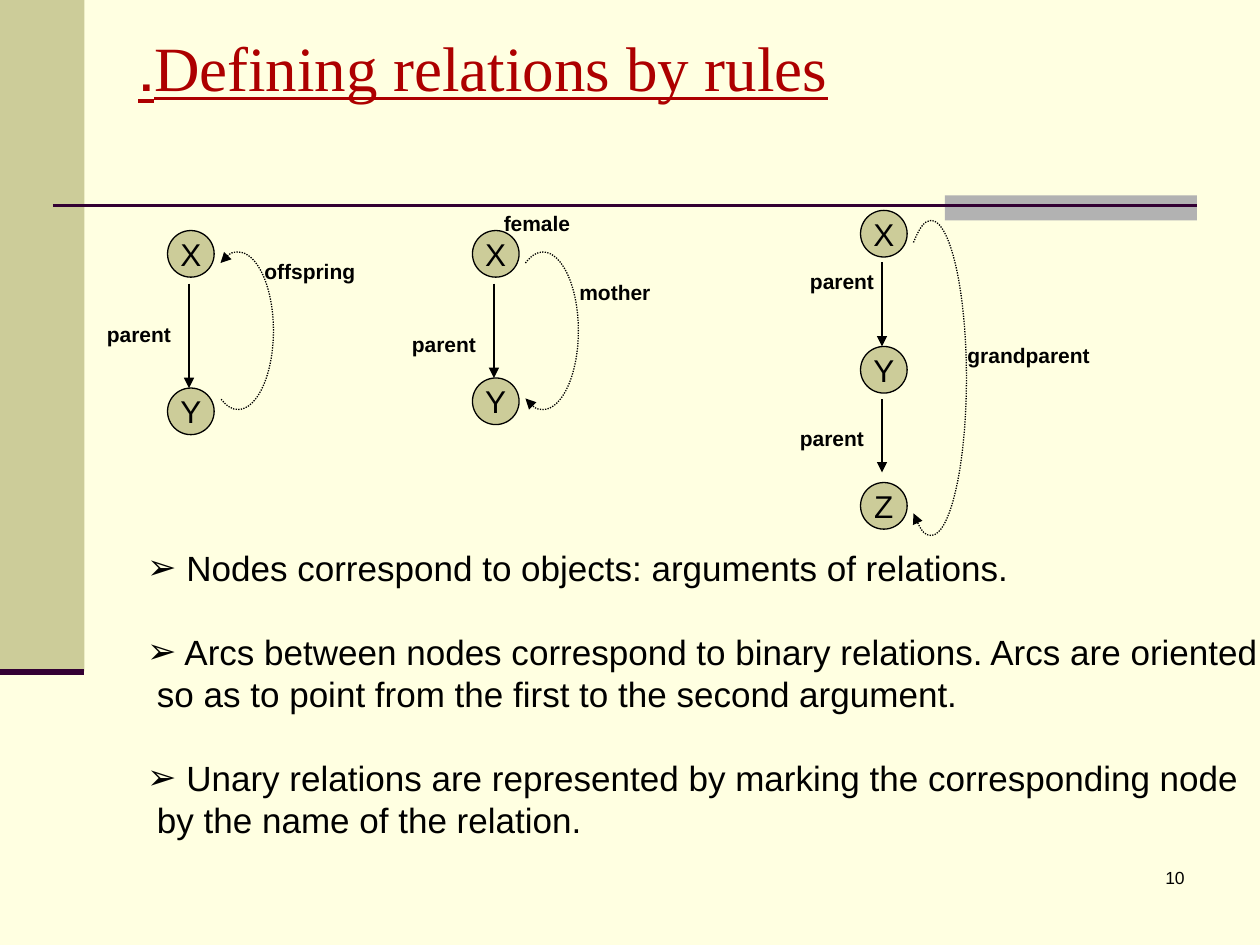
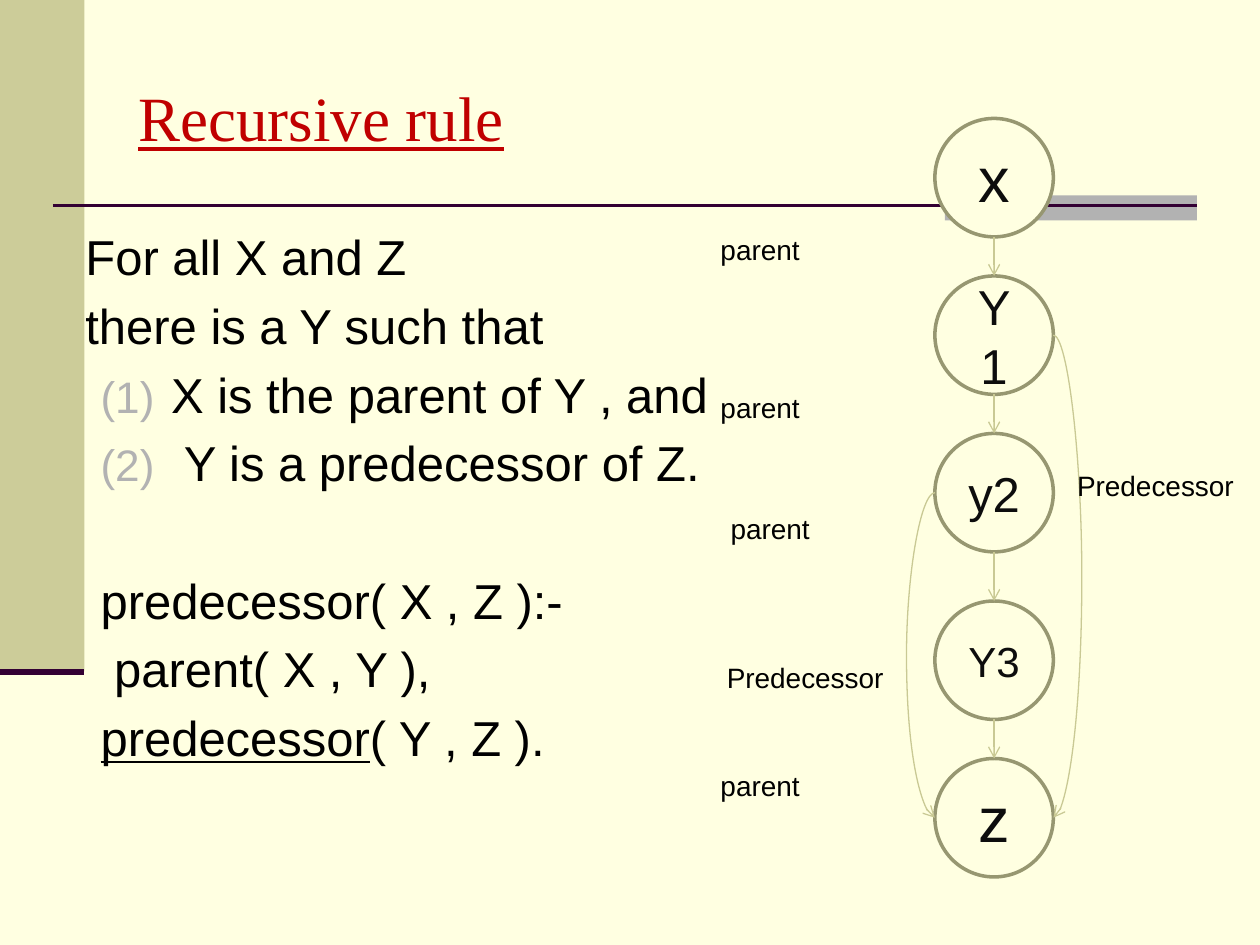
from lxml import etree
from pptx import Presentation
from pptx.dml.color import RGBColor
from pptx.enum import dml, shapes, text
from pptx.oxml.ns import qn
from pptx.util import Emu, Inches, Pt

CREAM = RGBColor(0xFF, 0xFF, 0xE1)
KHAKI = RGBColor(0xCC, 0xCC, 0x99)
OLIVE = RGBColor(0x97, 0x97, 0x71)
PALE_OLIVE = RGBColor(0xC9, 0xC9, 0x94)
GREY = RGBColor(0xB2, 0xB2, 0xB2)
PURPLE = RGBColor(0x33, 0x00, 0x33)
DARK_RED = RGBColor(0xAD, 0x00, 0x00)
RED = RGBColor(0xC0, 0x00, 0x00)
BLACK = RGBColor(0, 0, 0)
INK = RGBColor(0x0D, 0x0D, 0x0D)

LEFT, CENTER, RIGHT = text.PP_ALIGN.LEFT, text.PP_ALIGN.CENTER, text.PP_ALIGN.RIGHT
MIDDLE, TOP = text.MSO_ANCHOR.MIDDLE, text.MSO_ANCHOR.TOP

LABEL_WIDTHS = {"parent": 0.71, "offspring": 0.93, "female": 0.73,
                "mother": 0.77, "grandparent": 1.17}
SMALL = 0.37  # diameter of a node in the relation graphs
BIG = 0.94    # diameter of a node in the predecessor chain


def add_run(p, content, size=18, color=BLACK, font="Arial", bold=False, underline=False):
    r = p.add_run()
    r.text = content
    f = r.font
    f.name, f.size, f.bold, f.underline = font, Pt(size), bold, underline
    f.color.rgb = color


def add_text(s, content, x, y, w, h, align=LEFT, anchor=TOP, rtl=False, **fmt):
    tb = s.shapes.add_textbox(Inches(x), Inches(y), Inches(w), Inches(h))
    tf = tb.text_frame
    tf.word_wrap = True
    tf.vertical_anchor = anchor
    p = tf.paragraphs[0]
    p.alignment = align
    if rtl:
        p._p.get_or_add_pPr().set("rtl", "1")
    if content:
        add_run(p, content, **fmt)
    return tf


def set_indent(p, margin, indent):
    pPr = p._p.get_or_add_pPr()
    pPr.set("marL", str(Inches(margin)))
    pPr.set("indent", str(Inches(indent)))
    return pPr


def add_paragraph(tf, first, space):
    p = tf.paragraphs[0] if first else tf.add_paragraph()
    p.space_before = Pt(space)
    return p


def add_rect(s, x, y, w, h, color):
    sp = s.shapes.add_shape(shapes.MSO_SHAPE.RECTANGLE, *map(Inches, (x, y, w, h)))
    sp.shadow.inherit = False
    sp.fill.solid()
    sp.fill.fore_color.rgb = color
    sp.line.fill.background()


def add_node(s, name, x, y, d, size, fill=KHAKI, line=BLACK, weight=0.75, color=BLACK, wrap=False):
    sp = s.shapes.add_shape(shapes.MSO_SHAPE.OVAL, *map(Inches, (x, y, d, d)))
    sp.shadow.inherit = False
    sp.fill.solid()
    sp.fill.fore_color.rgb = fill
    sp.line.color.rgb = line
    sp.line.width = Pt(weight)
    tf = sp.text_frame
    tf.word_wrap = wrap
    tf.vertical_anchor = MIDDLE
    tf.paragraphs[0].alignment = CENTER
    add_run(tf.paragraphs[0], name, size, color)


def style_line(sp, color, weight, head=None, tail=None):
    """Format a line; head and tail are the arrowheads at its start and end."""
    sp.line.color.rgb = color
    sp.line.width = Pt(weight)
    ln = sp.line._get_or_add_ln()
    for tag, kind in (("a:headEnd", head), ("a:tailEnd", tail)):
        if kind:
            etree.SubElement(ln, qn(tag)).set("type", kind)


def add_line(s, x1, y1, x2, y2, color=BLACK, weight=0.75, tail=None):
    c = s.shapes.add_connector(shapes.MSO_CONNECTOR.STRAIGHT, *map(Inches, (x1, y1, x2, y2)))
    style_line(c, color, weight, tail=tail)
    etree.SubElement(c._element.spPr, qn("a:effectLst"))


def add_bow(s, x, y1, y2, side):
    """Curved arrow between two points above each other, bulging to side (1 right, -1 left)."""
    sliver, bulge = 1588, Inches(0.25)
    x = Inches(x)
    start, end = (x, x + sliver) if side > 0 else (x + sliver, x)
    c = s.shapes.add_connector(shapes.MSO_CONNECTOR.CURVE, Emu(start), Inches(y1),
                               Emu(end), Inches(y2))
    av = c._element.spPr.find(qn("a:prstGeom")).get_or_add_avLst()
    gd = etree.SubElement(av, qn("a:gd"))
    gd.set("name", "adj1")
    gd.set("fmla", f"val {round(bulge / sliver * 100000)}")
    style_line(c, PALE_OLIVE, 0.75, tail="arrow")
    etree.SubElement(c._element.spPr, qn("a:effectLst"))


def add_arc(s, x, y, h, head=None, tail=None):
    """Dotted arc of four Bézier curves, from top to bottom, open on the left."""
    upper = [(0, 0.07), (0.05, 0.02), (0.09, 0), (0.14, 0), (0.29, 0), (0.42, 0.22), (0.42, 0.5)]
    lower = [(dx, 1 - part) for dx, part in reversed(upper[:-1])]
    points = [(Inches(x + dx), Inches(y + h * part)) for dx, part in upper + lower]
    fb = s.shapes.build_freeform(*points[0])
    fb.add_line_segments(points[1:], close=False)
    sp = fb.convert_to_shape()
    segments = list(sp._element.iter(qn("a:lnTo")))
    outline = segments[0].getparent()
    for i in range(0, len(segments), 3):
        curve = etree.SubElement(outline, qn("a:cubicBezTo"))
        for segment in segments[i:i + 3]:
            curve.append(segment[0])
            outline.remove(segment)
    sp.shadow.inherit = False
    sp.fill.background()
    sp.line.dash_style = dml.MSO_LINE.ROUND_DOT
    style_line(sp, BLACK, 0.75, head, tail)


def add_base(prs, title, color, title_height):
    s = prs.slides.add_slide(prs.slide_layouts[6])
    s.background.fill.solid()
    s.background.fill.fore_color.rgb = CREAM
    add_rect(s, 0, 0, 0.67, 5.33, KHAKI)
    add_rect(s, 7.5, 1.55, 2, 0.2, GREY)
    add_line(s, 0.42, 1.63, 9.5, 1.63, PURPLE, 1.5)
    add_line(s, 0, 5.33, 0.67, 5.33, PURPLE, 3.5)
    add_text(s, title, 1, 0.3, 8.5, title_height, anchor=MIDDLE, rtl=True,
             size=36, color=color, font="Times New Roman", underline=True)
    return s


def add_notes_on_graphs(s):
    tf = add_text(s, "", 1.07, 4.29, 9.02, 2.46)
    points = [
        [" Nodes correspond to objects: arguments of relations."],
        [" Arcs between nodes correspond to binary relations. Arcs are oriented",
         " so as to point from the first to the second argument."],
        [" Unary relations are represented by marking the corresponding node",
         " by the name of the relation."],
    ]
    for i, lines in enumerate(points):
        for j, line in enumerate(lines):
            p = add_paragraph(tf, i + j == 0, 24 if i and not j else 0)
            if j == 0:
                pPr = set_indent(p, 0, 0)
                etree.SubElement(pPr, qn("a:buFont")).set("typeface", "Arial")
                etree.SubElement(pPr, qn("a:buChar")).set("char", "➢")
            add_run(p, line, 20)


def add_rule_text(s):
    tf = add_text(s, "", 0.58, 1.75, 8.5, 4.95)
    lines = [
        ("plain", "For all X and Z"), ("plain", "there is a Y such that"),
        ("number", "X is the parent of Y , and"), ("number", " Y is a predecessor of Z."),
        ("clause", "predecessor( X , Z ):-"), ("code", " parent( X , Y ),"),
        ("code", "predecessor", "( Y , Z )."),
    ]
    for i, (kind, content, *rest) in enumerate(lines):
        p = add_paragraph(tf, i == 0, 45 if kind == "clause" else 5.6)
        pPr = set_indent(p, *((0.38, -0.38) if kind == "plain" else (0.68, -0.56)))
        if kind == "number":
            clr = etree.SubElement(pPr, qn("a:buClr"))
            etree.SubElement(clr, qn("a:srgbClr")).set("val", str(GREY))
            etree.SubElement(pPr, qn("a:buSzPct")).set("val", "90000")
            etree.SubElement(pPr, qn("a:buAutoNum")).set("type", "arabicParenBoth")
        add_run(p, content, 28, underline=bool(rest))
        for tail in rest:
            add_run(p, tail, 28)


def relations_slide(prs):
    s = add_base(prs, "Defining relations by rules.", DARK_RED, 0.45)
    add_text(s, "10", 7.42, 6.83, 2.08, 0.5, align=RIGHT, size=10)
    graphs = [
        (1.33, [("X", 1.83), ("Y", 3.08)]),
        (3.75, [("X", 1.83), ("Y", 3)]),
        (6.83, [("X", 1.67), ("Y", 2.75), ("Z", 3.83)]),
    ]
    for x, nodes in graphs:
        for name, y in nodes:
            add_node(s, name, x, y, SMALL, 18)
    for x, y1, y2 in [(1.5, 2.25, 3.08), (3.92, 2.25, 3), (7, 2.08, 2.75), (7, 3.17, 3.75)]:
        add_line(s, x, y1, x, y2, tail="triangle")
    add_arc(s, 4.17, 2, 1.25, tail="triangle")
    add_arc(s, 1.75, 2, 1.25, head="triangle")
    add_arc(s, 7.25, 1.75, 2.5, tail="triangle")
    for label, x, y in [
        ("parent", 0.75, 2.5), ("offspring", 2, 2), ("parent", 3.17, 2.58),
        ("female", 3.9, 1.62), ("mother", 4.5, 2.17), ("parent", 6.33, 2.08),
        ("parent", 6.25, 3.33), ("grandparent", 7.58, 2.67),
    ]:
        tf = add_text(s, label, x, y, LABEL_WIDTHS[label], 0.3, size=12, bold=True)
        tf.word_wrap = False
    add_notes_on_graphs(s)


def recursion_slide(prs):
    s = add_base(prs, "Recursive rule", RED, 1.25)
    add_rule_text(s)
    x = 7.42
    chain = [("x", 0.94, 36), ("Y1", 2.19, 28), ("y2", 3.44, 28), ("Y3", 4.77, 24), ("z", 6.02, 36)]
    for name, y, size in chain:
        add_node(s, name, x, y, BIG, size, CREAM, OLIVE, 2, INK, wrap=True)
    for (_, above, _), (_, below, _) in zip(chain, chain[1:]):
        add_line(s, x + BIG / 2, above + BIG, x + BIG / 2, below, PALE_OLIVE, tail="arrow")
    middles = {name: y + BIG / 2 for name, y, _ in chain}
    add_bow(s, x + BIG, middles["Y1"], middles["z"], 1)
    add_bow(s, x, middles["y2"], middles["z"], -1)
    for label, left, top in [
        ("Predecessor", 8.45, 3.67), ("parent", 5.62, 1.8), ("parent", 5.62, 3.05),
        ("parent", 5.7, 4.01), ("parent", 5.62, 6.05), ("Predecessor", 5.67, 5.19),
    ]:
        add_text(s, label, left, top, 1.8, 0.37, size=16)


def main():
    prs = Presentation()
    prs.slide_width, prs.slide_height = Inches(10), Inches(7.5)
    relations_slide(prs)
    recursion_slide(prs)
    prs.save("out.pptx")


if __name__ == "__main__":
    main()
